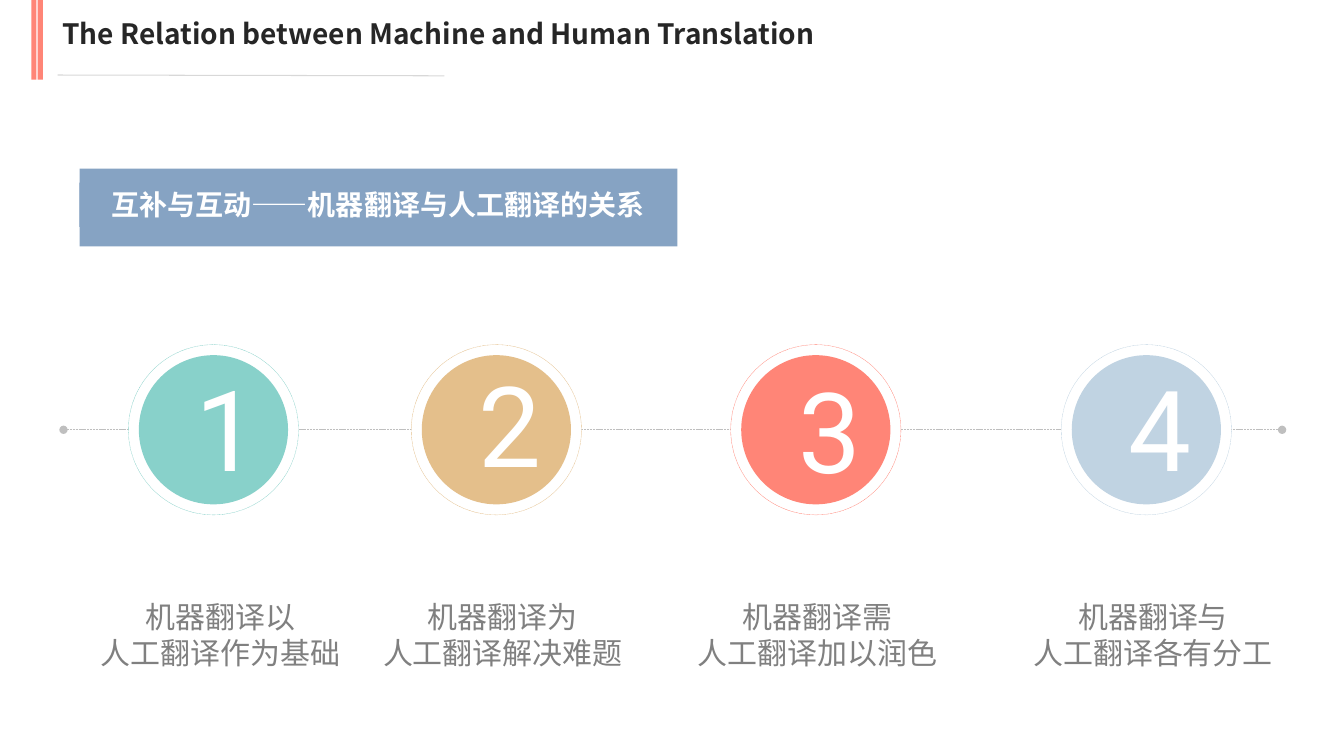
from lxml import etree
from pptx import Presentation
from pptx.dml.color import RGBColor
from pptx.enum.dml import MSO_LINE
from pptx.enum.shapes import MSO_CONNECTOR, MSO_SHAPE
from pptx.enum.text import MSO_ANCHOR, PP_ALIGN
from pptx.oxml.ns import qn
from pptx.util import Cm, Pt

RECTANGLE, OVAL = MSO_SHAPE.RECTANGLE, MSO_SHAPE.OVAL
STRAIGHT = MSO_CONNECTOR.STRAIGHT
DOTTED, DASHED = MSO_LINE.ROUND_DOT, MSO_LINE.SQUARE_DOT
LEFT, CENTER = PP_ALIGN.LEFT, PP_ALIGN.CENTER
TOP, MIDDLE = MSO_ANCHOR.TOP, MSO_ANCHOR.MIDDLE

COLORS = {
    "white": "FFFFFF", "title": "262626", "label": "808080",
    "axis": "BFBFBF", "rule": "D8D8D8", "banner": "86A3C3",
    "teal": "88D1CA", "sand": "E4BF8B", "coral": "FF8577", "sky": "C0D3E2",
}
TEXT_FONT, NUMBER_FONT = "Noto Sans CJK SC", "Roboto"
AXIS_Y = 10.83
RING_SIZE, DISC_SIZE = 4.29, 3.76

STEPS = [
    ("teal", 5.38, 8.94, 5.56, "机器翻译以", "人工翻译作为基础"),
    ("sand", 12.51, 8.84, 12.67, "机器翻译为", "人工翻译解决难题"),
    ("coral", 20.56, 8.99, 20.6, "机器翻译需", "人工翻译加以润色"),
    ("sky", 28.89, 8.94, 29.06, "机器翻译与", "人工翻译各有分工"),
]


class SlideBuilder:
    """Draws styled elements on one slide, with lengths in centimetres."""

    def __init__(self, slide):
        self.slide = slide

    def color(self, name):
        return RGBColor.from_string(COLORS[name])

    def shape(self, kind, left, top, width, height, fill, outline=None):
        shape = self.slide.shapes.add_shape(
            kind, Cm(left), Cm(top), Cm(width), Cm(height))
        shape.shadow.inherit = False
        shape.fill.solid()
        shape.fill.fore_color.rgb = self.color(fill)
        if outline:
            shape.line.color.rgb = self.color(outline)
            shape.line.width = Pt(0.25)
            shape.line.dash_style = DOTTED
        else:
            shape.line.fill.background()
        return shape

    def circle(self, center_x, size, fill, outline=None):
        self.shape(OVAL, center_x - size / 2, AXIS_Y - size / 2,
                   size, size, fill, outline)

    def line(self, start, end, color, width, dash=None, dot_ends=False):
        connector = self.slide.shapes.add_connector(
            STRAIGHT, *map(Cm, start + end))
        connector.line.color.rgb = self.color(color)
        connector.line.width = Pt(width)
        if dash:
            connector.line.dash_style = dash
        properties = connector._element.spPr
        if dot_ends:
            outline = properties.find(qn("a:ln"))
            for end_tag in ("a:headEnd", "a:tailEnd"):
                etree.SubElement(outline, qn(end_tag), type="oval")
        etree.SubElement(properties, qn("a:effectLst"))

    def fill_text(self, shape, lines, size, color, font=TEXT_FONT, bold=False,
                  align=CENTER, anchor=TOP, wrap=True):
        frame = shape.text_frame
        frame.word_wrap = wrap
        frame.vertical_anchor = anchor
        frame.text = "\n".join(lines)
        for paragraph in frame.paragraphs:
            paragraph.alignment = align
            paragraph.font.name = font
            paragraph.font.size = Pt(size)
            paragraph.font.bold = bold
            paragraph.font.color.rgb = self.color(color)
            properties = paragraph._p.pPr.find(qn("a:defRPr"))
            etree.SubElement(properties, qn("a:ea"), typeface=font)

    def text(self, left, top, width, height, lines, size, color, **style):
        box = self.slide.shapes.add_textbox(
            Cm(left), Cm(top), Cm(width), Cm(height))
        self.fill_text(box, lines, size, color, **style)

    def step(self, number, color, center_x, number_top, label_x, *label):
        self.circle(center_x, RING_SIZE, "white", color)
        self.circle(center_x, DISC_SIZE, color)
        self.text(center_x - 0.69, number_top, 1.38, 3.68, [str(number)],
                  80, "white", font=NUMBER_FONT)
        self.text(label_x - 3.28, 14.96, 6.56, 2.08, label,
                  21.4, "label", wrap=False)


def main():
    presentation = Presentation()
    presentation.slide_width = Cm(33.87)
    presentation.slide_height = Cm(19.05)
    slide = presentation.slides.add_slide(presentation.slide_layouts[6])
    builder = SlideBuilder(slide)

    for bar_left in (0.79, 0.95):
        builder.shape(RECTANGLE, bar_left, 0, 0.13, 2.01, "coral")
    builder.text(1.32, 0.28, 20.68, 1.12,
                 ["The Relation between Machine and Human Translation"],
                 20, "title", bold=True, align=LEFT)
    builder.line((1.45, 1.89), (11.2, 1.91), "rule", 0.75)

    builder.shape(RECTANGLE, 2.01, 4.25, 15.06, 1.96, "banner")
    heading = builder.shape(RECTANGLE, 2, 4.6, 15.06, 1.12, "banner")
    builder.fill_text(heading, ["互补与互动——机器翻译与人工翻译的关系"],
                      20, "white", bold=True, anchor=MIDDLE)

    builder.line((1.6, AXIS_Y), (32.31, AXIS_Y), "axis", 0.5, DASHED, True)
    for number, step in enumerate(STEPS, start=1):
        builder.step(number, *step)

    presentation.save("out.pptx")


if __name__ == "__main__":
    main()
